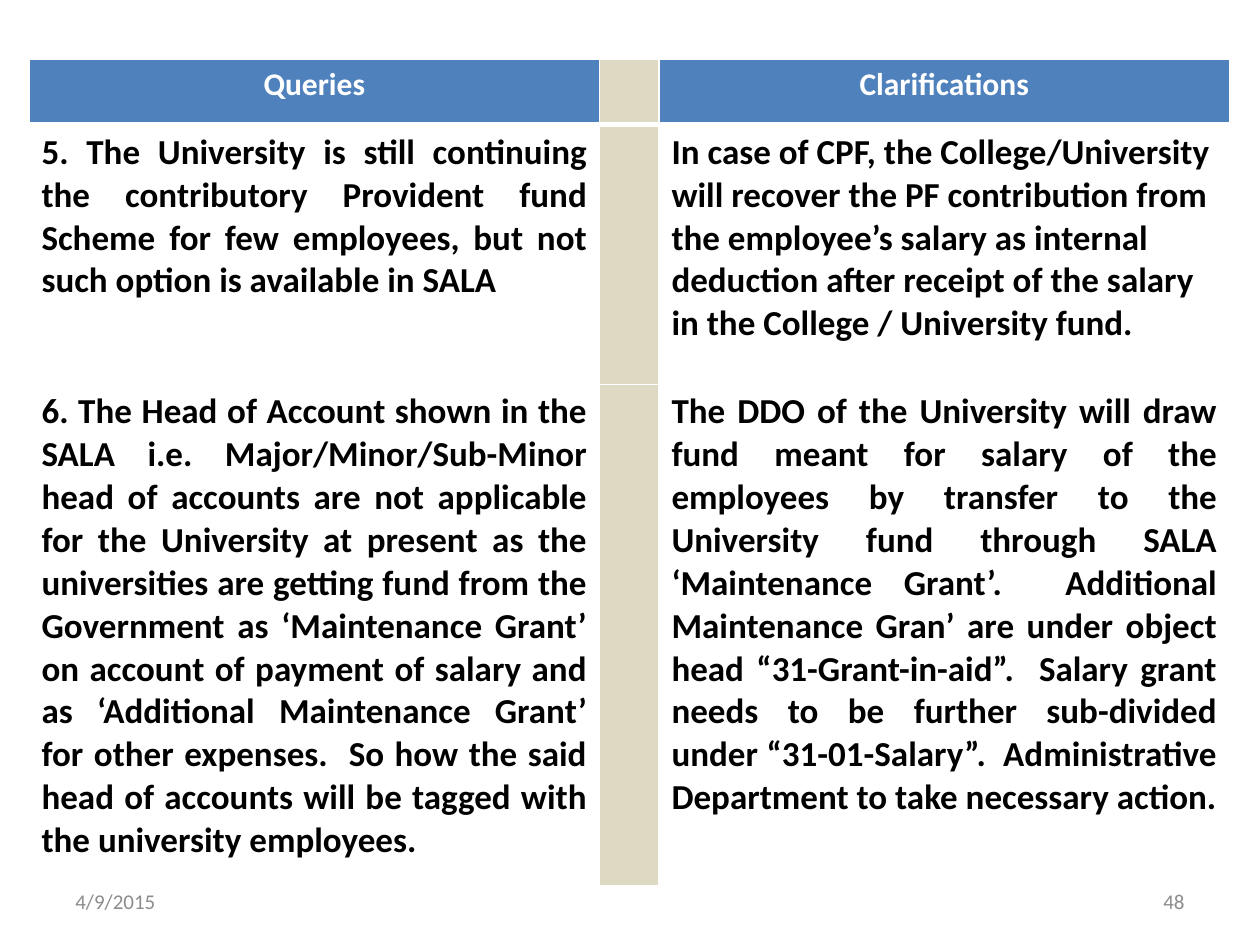
from pptx import Presentation, util as u
from pptx.dml.color import RGBColor
from pptx.enum import text as t
from pptx.oxml import parse_xml
from pptx.oxml.ns import nsdecls

AL = t.PP_ALIGN


def paint(para, size, color, align, bold=False):
    para.alignment = align
    font = para.font
    font.name, font.size, font.bold = "Calibri", u.Pt(size), bold
    font.color.rgb = RGBColor.from_string(color)


def edge(cell, side, width):
    return parse_xml(
        f'<a:{side} {nsdecls("a")} w="{u.Pt(width)}"><a:solidFill>'
        f'<a:srgbClr val="FFFFFF"/></a:solidFill></a:{side}>')


prs = Presentation()
prs.slide_width, prs.slide_height = u.Inches(10), u.Inches(7.5)
slide = prs.slides.add_slide(prs.slide_layouts[6])

# Wording: query, clarification and the clarification's alignment
rows = [
    ("Queries", "Clarifications", AL.CENTER),
    ("5. The University is still continuing the contributory Provident fund "
     "Scheme for few employees, but not such option is available in SALA",
     "In case of CPF, the College/University will recover the PF contribution "
     "from the employee’s salary as internal deduction after receipt of the "
     "salary in the College / University fund.", AL.LEFT),
    ("6. The Head of Account shown in the SALA i.e. Major/Minor/Sub-Minor head "
     "of accounts are not applicable for the University at present as the "
     "universities are getting fund from the Government as ‘Maintenance Grant’ "
     "on account of payment of salary and as ‘Additional Maintenance Grant’ for "
     "other expenses.  So how the said head of accounts will be tagged with the "
     "university employees. ",
     "The DDO of the University will draw fund meant for salary of the employees "
     "by transfer to the University fund through SALA ‘Maintenance Grant’.  "
     "Additional Maintenance Gran’ are under object head “31-Grant-in-aid”.  "
     "Salary grant needs to be further sub-divided under “31-01-Salary”.  "
     "Administrative Department to take necessary action.", AL.JUSTIFY),
]

# Table grid
wide, gap = 4.53, 0.47
highs = [0.52, 2.06, 3.98]
table = slide.shapes.add_table(
    3, 3, u.Inches(0.23), u.Inches(0.47),
    u.Inches(2 * wide + gap), u.Inches(sum(highs))).table
for col, width in zip(table.columns, [wide, gap, wide]):
    col.width = u.Inches(width)

# Cells
for r, (query, reply, align) in enumerate(rows):
    head = r == 0
    table.rows[r].height = u.Inches(highs[r])
    fill = "4F81BD" if head else "FFFFFF"
    left = AL.CENTER if head else AL.JUSTIFY
    for c, (words, back, side) in enumerate([
            (query, fill, left), ("", "DDD9C3", left), (reply, fill, align)]):
        cell = table.cell(r, c)
        cell.text = words
        paint(cell.text_frame.paragraphs[0], 18 if head else 20,
              "FFFFFF" if head else "000000", side, True)
        cell.fill.solid()
        cell.fill.fore_color.rgb = RGBColor.from_string(back)
        props = cell._tc.get_or_add_tcPr()
        widths = [1, 1, 3 if r == 1 else 1, 3 if head else 1]
        for i, name in enumerate(["lnL", "lnR", "lnT", "lnB"]):
            props.insert(i, edge(cell, name, widths[i]))

# Footer: date and slide number
for words, x, align in [("4/9/2015", 0.5, AL.LEFT), ("48", 7.17, AL.RIGHT)]:
    box = slide.shapes.add_textbox(
        u.Inches(x), u.Inches(6.95), u.Inches(2.33), u.Inches(0.4))
    frame = box.text_frame
    frame.word_wrap = True
    frame.vertical_anchor = t.MSO_ANCHOR.MIDDLE
    frame.text = words
    paint(frame.paragraphs[0], 12, "8C8C8C", align)

prs.save("out.pptx")
